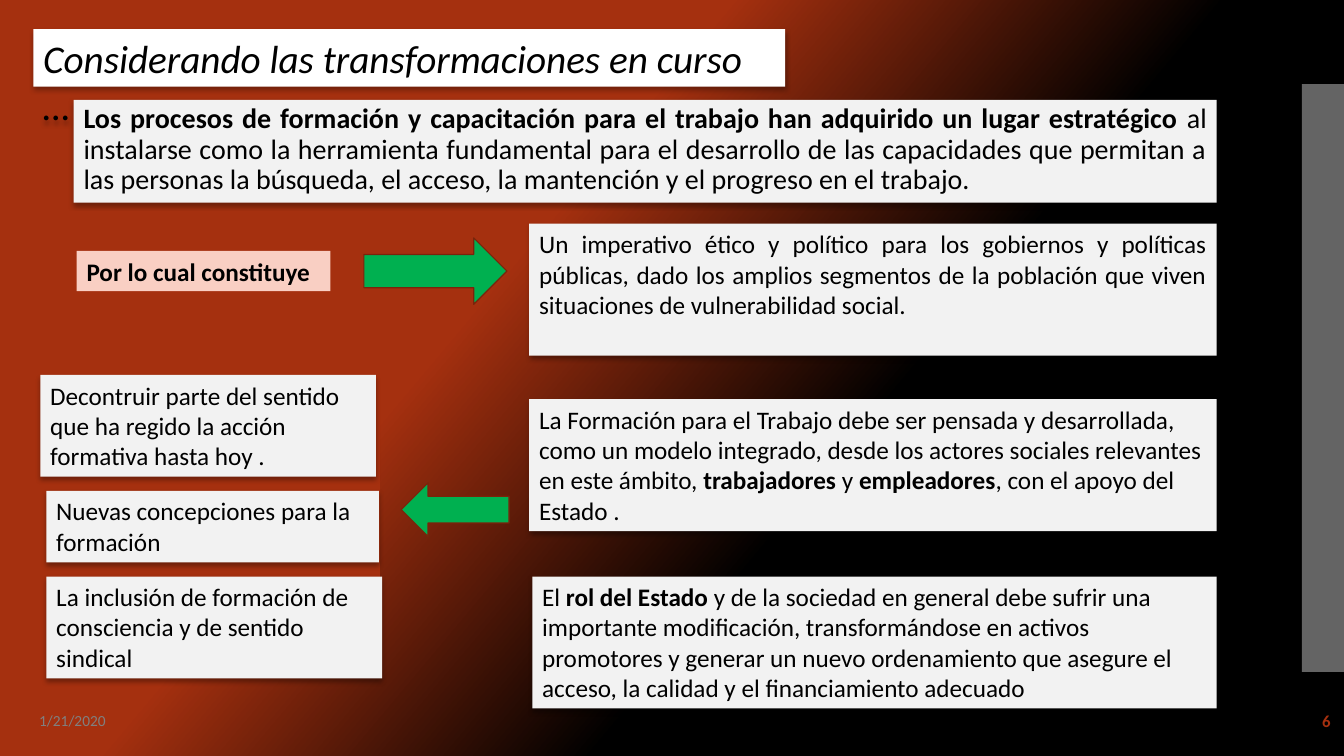
import pptx
import pptx.util
import pptx.dml.color
import pptx.enum.shapes
import pptx.enum.text
import pptx.oxml
import pptx.oxml.ns

Pt = pptx.util.Pt
RGB = pptx.dml.color.RGBColor.from_string
SHAPES = pptx.enum.shapes.MSO_SHAPE
ALIGN = pptx.enum.text.PP_ALIGN
ANCHOR = pptx.enum.text.MSO_ANCHOR

THEME = {
    "font": "Calibri",
    "red": "A5300F", "black": "000000", "white": "FFFFFF",
    "card": "F2F2F2", "peach": "F9CFC3", "green": "00B050",
    "outline": "7A240B", "side": "C8C8C8", "muted": "808080",
    "title": 28, "lead": 20, "body": 18, "number": 12, "date": 11,
}
NAMESPACE = 'xmlns:a="http://schemas.openxmlformats.org/drawingml/2006/main"'
SHADOW = (f'<a:outerShdw {NAMESPACE} blurRad="44450" dist="27940" dir="5400000" '
          'algn="ctr" rotWithShape="0"><a:srgbClr val="000000">'
          '<a:alpha val="32000"/></a:srgbClr></a:outerShdw>')

presentation = pptx.Presentation()
presentation.slide_width, presentation.slide_height = Pt(960), Pt(540)
slide = presentation.slides.add_slide(presentation.slide_layouts[6])


def add_block(bounds, color, preset=SHAPES.RECTANGLE, shadow=False):
    shape = slide.shapes.add_shape(preset, *map(Pt, bounds))
    shape.fill.solid()
    shape.fill.fore_color.rgb = RGB(THEME[color])
    shape.line.fill.background()
    shape.shadow.inherit = False
    if shadow:
        effects = shape._element.spPr.find(pptx.oxml.ns.qn("a:effectLst"))
        effects.append(pptx.oxml.parse_xml(SHADOW))
    return shape


def write_text(shape, runs, size, color="black", italic=False,
               align=ALIGN.LEFT, spacing=1.0, anchor=ANCHOR.TOP):
    frame = shape.text_frame
    frame.word_wrap = True
    frame.vertical_anchor = anchor
    paragraph = frame.paragraphs[0]
    paragraph.alignment = align
    paragraph.line_spacing = spacing
    for text, bold in runs:
        run = paragraph.add_run()
        run.text = text
        formats = {"name": THEME["font"], "size": Pt(THEME[size]),
                   "bold": bold, "italic": italic}
        for attribute, value in formats.items():
            setattr(run.font, attribute, value)
        run.font.color.rgb = RGB(THEME[color])


# Background gradient
background = slide.background.fill
background.gradient()
background.gradient_angle = 320
for stop, (position, color) in zip(background.gradient_stops,
                                   [(0.37, "red"), (0.62, "black")]):
    stop.position = position
    stop.color.rgb = RGB(THEME[color])

# Side panels, the right one half transparent
add_block((0, 60, 271.4, 420), "red")
side_panel = add_block((930, 60, 30, 420), "side")
side_color = side_panel._element.spPr.find(".//" + pptx.oxml.ns.qn("a:srgbClr"))
side_color.append(pptx.oxml.parse_xml(f'<a:alpha {NAMESPACE} val="50000"/>'))

# Lead statement and title
lead = add_block((52.6, 71.3, 816.4, 73.4), "card", shadow=True)
write_text(lead, [
    ("Los procesos de formación y capacitación para el trabajo han adquirido "
     "un lugar estratégico ", True),
    ("al instalarse como la herramienta fundamental para el desarrollo de las "
     "capacidades que permitan a las personas la búsqueda, el acceso, la "
     "mantención y el progreso en el trabajo.", False),
], "lead", align=ALIGN.JUSTIFY, spacing=0.9)

title = add_block((23.8, 20.9, 537.1, 41), "white", shadow=True)
write_text(title, [("Considerando las transformaciones en curso …", False)],
           "title", italic=True)

# Label
label = add_block((54.7, 179.3, 181.4, 28.8), "peach")
write_text(label, [("Por lo cual constituye", True)], "body")

# Cards: bounds, alignment, runs
cards = [
    ((378, 159.8, 491, 94.3), ALIGN.JUSTIFY, [
        ("Un imperativo ético y político para los gobiernos y políticas "
         "públicas, dado los amplios segmentos de la población que viven "
         "situaciones de vulnerabilidad social. ", False)]),
    ((378, 285.1, 491, 94.3), ALIGN.LEFT, [
        ("La Formación para el Trabajo debe ser pensada y desarrollada, como un "
         "modelo integrado, desde los actores sociales relevantes en este "
         "ámbito, ", False),
        ("trabajadores", True), (" y ", False), ("empleadores", True),
        (", con el apoyo del Estado .", False)]),
    ((28.8, 267.8, 239.8, 72.7), ALIGN.LEFT, [
        ("Decontruir parte del sentido que ha regido la acción formativa hasta "
         "hoy .", False)]),
    ((33.1, 350.6, 237.6, 51.1), ALIGN.LEFT, [
        ("Nuevas concepciones para la formación", False)]),
    ((33.1, 411.8, 239.8, 72.7), ALIGN.LEFT, [
        ("La inclusión de formación de consciencia y de sentido sindical", False)]),
    ((380.2, 411.8, 488.8, 94.3), ALIGN.LEFT, [
        ("El ", False), ("rol del Estado ", True),
        ("y de la sociedad en general debe sufrir una importante modificación, "
         "transformándose en activos promotores y generar un nuevo ordenamiento "
         "que asegure el acceso, la calidad y el financiamiento adecuado", False)]),
]
for bounds, align, runs in cards:
    write_text(add_block(bounds, "card", shadow=True), runs, "body", align=align)

# Arrows
for bounds, rotation in [((259.9, 169.9, 102.2, 47.5), 0),
                         ((286.6, 344.9, 77, 38.2), 180)]:
    arrow = add_block(bounds, "green", SHAPES.RIGHT_ARROW)
    arrow.rotation = rotation
    arrow.line.color.rgb = RGB(THEME["outline"])
    arrow.line.width = Pt(0.85)

# Footer
for left, width, text, size, color, bold, align in [
    (20.9, 216, "1/21/2020", "date", "muted", False, ALIGN.LEFT),
    (837.4, 120.2, "6", "number", "red", True, ALIGN.RIGHT),
]:
    footer = slide.shapes.add_textbox(Pt(left), Pt(500.4), Pt(width), Pt(28.8))
    write_text(footer, [(text, bold)], size, color, align=align,
               anchor=ANCHOR.MIDDLE)

presentation.save("out.pptx")
